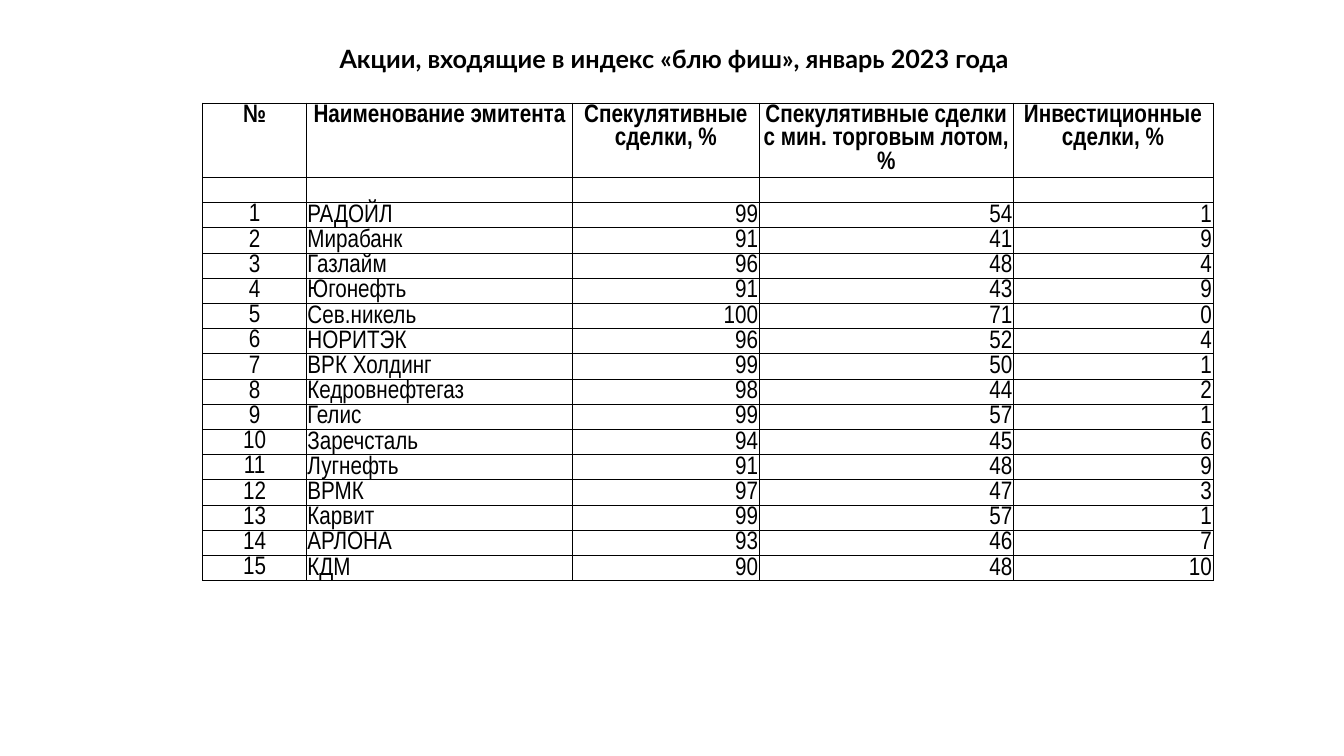
from dataclasses import dataclass

from lxml import etree
from pptx import Presentation
from pptx.dml.color import RGBColor
from pptx.enum.text import MSO_ANCHOR, PP_ALIGN
from pptx.oxml.ns import qn
from pptx.util import Inches, Pt

LEFT, CENTER, RIGHT = PP_ALIGN.LEFT, PP_ALIGN.CENTER, PP_ALIGN.RIGHT
TOP, MIDDLE, BOTTOM = MSO_ANCHOR.TOP, MSO_ANCHOR.MIDDLE, MSO_ANCHOR.BOTTOM


@dataclass(frozen=True)
class Theme:
    ink: str = "000000"
    heading_font: str = "Lato"
    table_font: str = "Arial Narrow"
    text_size: int = 18
    border_width: float = 0.5


theme = Theme()


def add_text(paragraph, text, font_name, bold, alignment):
    paragraph.alignment = alignment
    run = paragraph.add_run()
    run.text = text
    run.font.name = font_name
    run.font.size = Pt(theme.text_size)
    run.font.bold = bold
    run.font.color.rgb = RGBColor.from_string(theme.ink)


def add_borders(cell):
    properties = cell._tc.get_or_add_tcPr()
    for side in ("a:lnL", "a:lnR", "a:lnT", "a:lnB"):
        border = etree.SubElement(properties, qn(side), w=str(Pt(theme.border_width)))
        fill = etree.SubElement(border, qn("a:solidFill"))
        etree.SubElement(fill, qn("a:srgbClr"), val=theme.ink)


headers = [
    "№",
    "Наименование эмитента",
    "Спекулятивные сделки, %",
    "Спекулятивные сделки с мин. торговым лотом, %",
    "Инвестиционные сделки, %",
]
issuers = [
    ("РАДОЙЛ", 99, 54, 1),
    ("Мирабанк", 91, 41, 9),
    ("Газлайм", 96, 48, 4),
    ("Югонефть", 91, 43, 9),
    ("Сев.никель", 100, 71, 0),
    ("НОРИТЭК", 96, 52, 4),
    ("ВРК Холдинг", 99, 50, 1),
    ("Кедровнефтегаз", 98, 44, 2),
    ("Гелис", 99, 57, 1),
    ("Заречсталь", 94, 45, 6),
    ("Лугнефть", 91, 48, 9),
    ("ВРМК", 97, 47, 3),
    ("Карвит", 99, 57, 1),
    ("АРЛОНА", 93, 46, 7),
    ("КДМ", 90, 48, 10),
]
rows = [headers, [""] * len(headers)]
rows += [(number, *issuer) for number, issuer in enumerate(issuers, 1)]

column_widths = [1.03, 2.64, 1.85, 2.52, 1.98]
row_heights = [0.74] + [0.25] * (len(rows) - 1)
column_alignments = [CENTER, LEFT, RIGHT, RIGHT, RIGHT]
column_anchors = [TOP, BOTTOM, BOTTOM, BOTTOM, BOTTOM]

prs = Presentation()
prs.slide_width, prs.slide_height = Inches(13.33), Inches(7.5)
slide = prs.slides.add_slide(prs.slide_layouts[5])

heading = slide.shapes.title
heading.left, heading.top = Inches(0.95), Inches(0.4)
heading.width, heading.height = Inches(11.47), Inches(0.4)
heading.text_frame.vertical_anchor = MIDDLE
heading_line = heading.text_frame.paragraphs[0]
heading_line.line_spacing = 0.9
add_text(heading_line, "Акции, входящие в индекс «блю фиш», январь 2023 года",
         theme.heading_font, True, CENTER)

deals = slide.shapes.add_table(
    len(rows), len(headers), Inches(2.01), Inches(1.02),
    Inches(sum(column_widths)), Inches(sum(row_heights)),
).table
deals.first_row = deals.horz_banding = False
for column, width in zip(deals.columns, column_widths):
    column.width = Inches(width)

for r, (values, height) in enumerate(zip(rows, row_heights)):
    deals.rows[r].height = Inches(height)
    is_header = r == 0
    for c, value in enumerate(values):
        cell = deals.cell(r, c)
        cell.margin_left = cell.margin_right = cell.margin_top = Inches(0.01)
        cell.margin_bottom = 0
        cell.vertical_anchor = TOP if is_header else column_anchors[c]
        add_borders(cell)
        cell.fill.background()
        paragraph = cell.text_frame.paragraphs[0]
        if value == "":
            end = etree.SubElement(paragraph._p, qn("a:endParaRPr"), sz=str(theme.text_size * 100))
            etree.SubElement(end, qn("a:latin"), typeface=theme.table_font)
        else:
            add_text(paragraph, str(value), theme.table_font, is_header,
                     CENTER if is_header else column_alignments[c])

prs.save("out.pptx")
